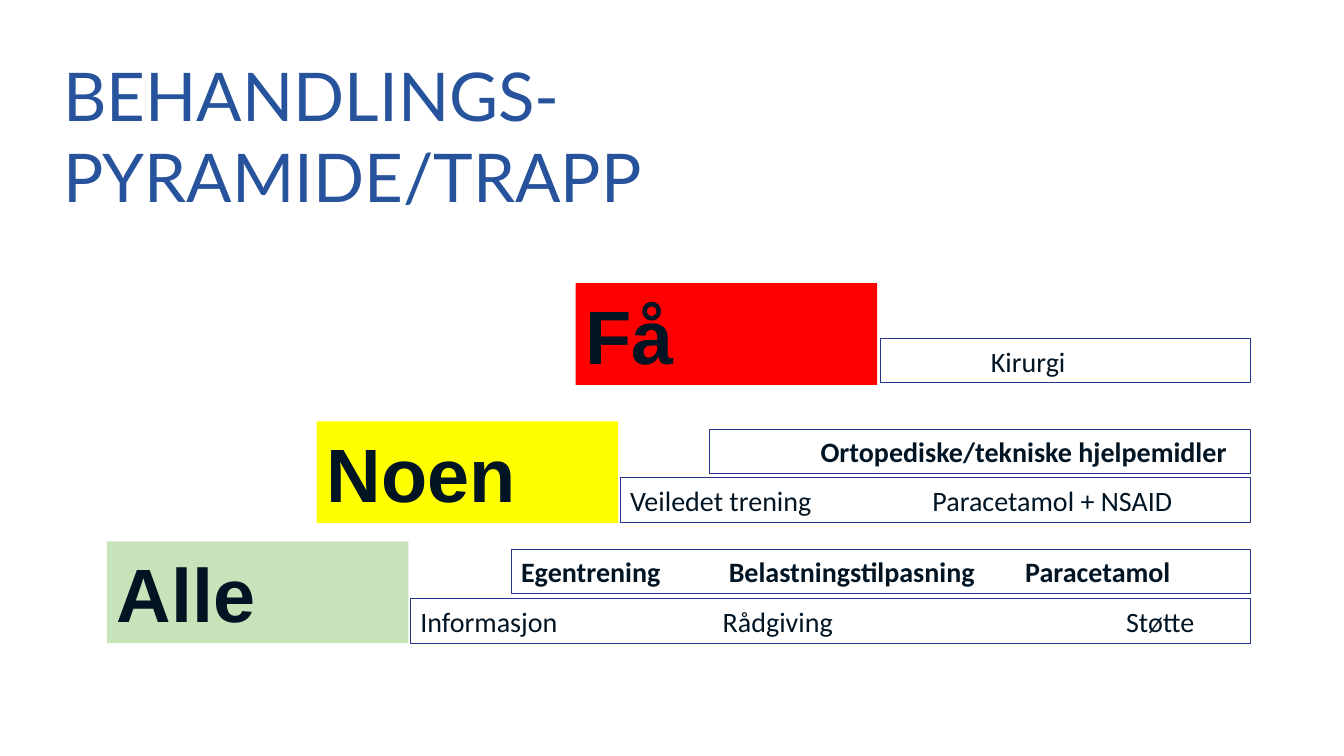
import pptx
import pptx.util
import pptx.dml.color
import pptx.enum.shapes
import pptx.enum.text
import pptx.oxml.ns
import lxml.etree

PX = 9144  # 100 px to the inch
HUES = {"ink": "001423", "title": "26539B", "line": "243388",
        "few": "FF0000", "some": "FFFF00", "all": "C8E3B9"}
RIGHT = 1240

deck = pptx.Presentation()
deck.slide_width, deck.slide_height = 1333 * PX, 750 * PX
slide = deck.slides.add_slide(deck.slide_layouts[6])


def hue(name):
    return pptx.dml.color.RGBColor.from_string(HUES[name])


def write(para, text, font, size, color, bold=False):
    run = para.add_run()
    run.text = text
    run.font.name = font
    run.font.size = pptx.util.Pt(size)
    run.font.bold = bold
    run.font.color.rgb = hue(color)


# Title
title = slide.shapes.add_textbox(63 * PX, 54 * PX, 883 * PX, 85 * PX)
frame = title.text_frame
frame.word_wrap = True
frame.margin_left = frame.margin_right = frame.margin_top = frame.margin_bottom = 0
write(frame.paragraphs[0], "BEHANDLINGS-PYRAMIDE/TRAPP", "Lato", 48, "title")

# Bars and steps: left, top, width, height, fill, font, size, bold, tabs, text
bars = [
    (407, 594, False, [300, 700], "Informasjon\tRådgiving\tStøtte"),
    (507, 545, True, [206, 500], "Egentrening\tBelastningstilpasning\tParacetamol"),
    (615, 474, False, [300], "Veiledet trening\tParacetamol + NSAID"),
    (704, 426, True, [100], "\tOrtopediske/tekniske hjelpemidler"),
    (873, 336, False, [100], "\tKirurgi"),
]
steps = [(314, 418, "some", "Noen"), (106, 537, "all", "Alle"), (571, 281, "few", "Få")]
boxes = [(left, top, RIGHT - left, 44, None, "Calibri", 20, bold, tabs, text)
         for left, top, bold, tabs, text in bars]
boxes += [(left, top, 299, 101, fill, "Arial", 54, True, [], text)
          for left, top, fill, text in steps]

for left, top, width, height, fill, font, size, bold, tabs, text in boxes:
    box = slide.shapes.add_shape(pptx.enum.shapes.MSO_SHAPE.RECTANGLE,
                                 left * PX, top * PX, width * PX, height * PX)
    box.shadow.inherit = False
    if fill:
        box.fill.solid()
        box.fill.fore_color.rgb = hue(fill)
        box.line.fill.background()
    else:
        box.fill.background()
        box.line.color.rgb = hue("line")
        box.line.width = pptx.util.Pt(0.75)
    frame = box.text_frame
    frame.word_wrap = True
    frame.vertical_anchor = pptx.enum.text.MSO_ANCHOR.MIDDLE
    para = frame.paragraphs[0]
    para.alignment = pptx.enum.text.PP_ALIGN.LEFT
    if tabs:
        qn = pptx.oxml.ns.qn
        stops = lxml.etree.SubElement(para._p.get_or_add_pPr(), qn("a:tabLst"))
        for tab in tabs:
            lxml.etree.SubElement(stops, qn("a:tab"), pos=str(tab * PX), algn="l")
    write(para, text, font, size, "ink", bold)

deck.save("out.pptx")
